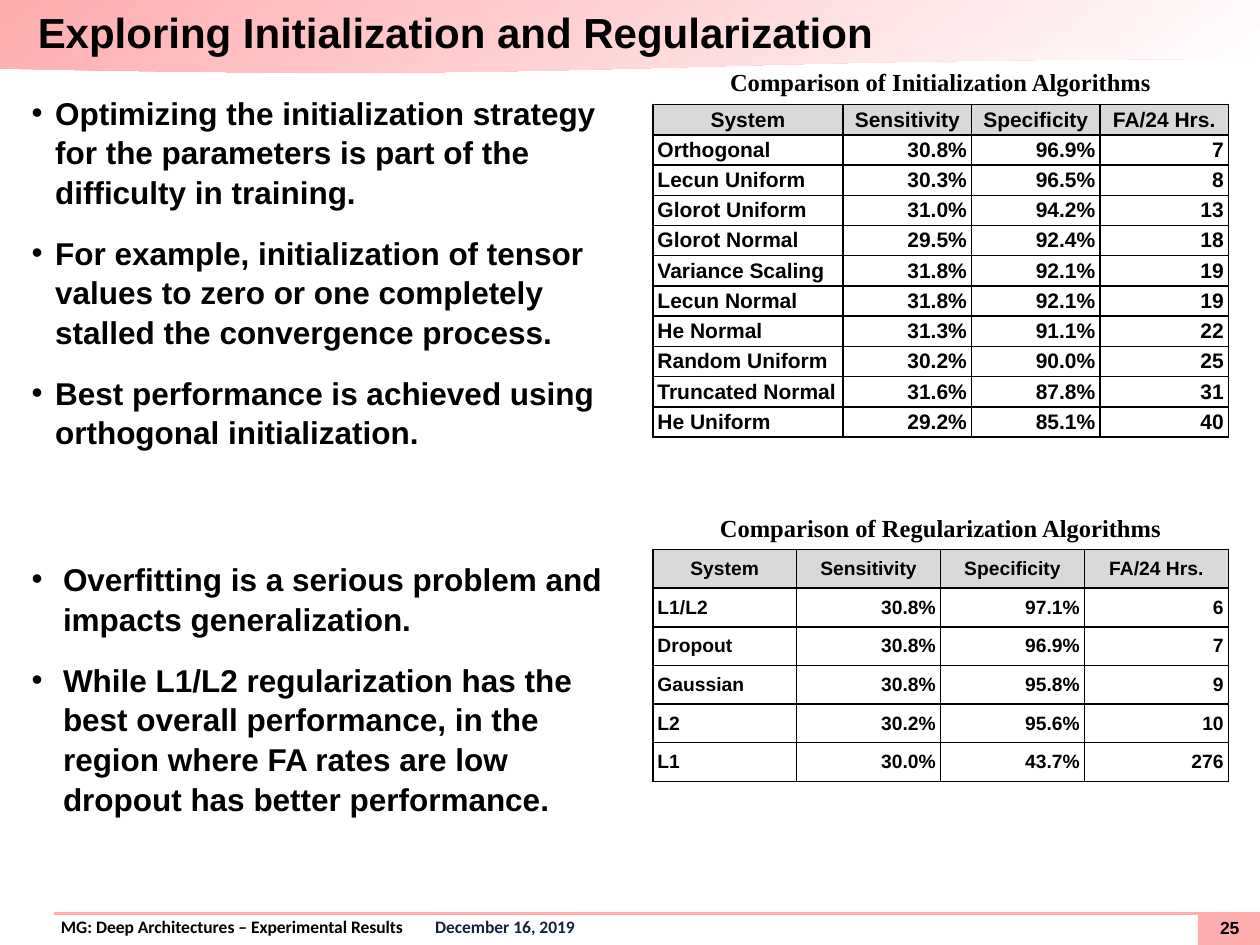
from dataclasses import dataclass

from lxml.etree import SubElement
from pptx import Presentation
from pptx.dml.color import RGBColor
from pptx.enum.shapes import MSO_CONNECTOR, MSO_SHAPE
from pptx.enum.text import MSO_ANCHOR, PP_ALIGN
from pptx.oxml.ns import qn
from pptx.slide import Slide
from pptx.util import Pt

BLACK, PINK, WHITE, NAVY, GREY = "000000", "FFACAF", "FFFFFF", "0F243E", "D9D9D9"
HEADINGS = ("System", "Sensitivity", "Specificity", "FA/24 Hrs.")
INITIALIZATION = (
    ("Orthogonal", "30.8%", "96.9%", "7"),
    ("Lecun Uniform", "30.3%", "96.5%", "8"),
    ("Glorot Uniform", "31.0%", "94.2%", "13"),
    ("Glorot Normal", "29.5%", "92.4%", "18"),
    ("Variance Scaling", "31.8%", "92.1%", "19"),
    ("Lecun Normal", "31.8%", "92.1%", "19"),
    ("He Normal", "31.3%", "91.1%", "22"),
    ("Random Uniform", "30.2%", "90.0%", "25"),
    ("Truncated Normal", "31.6%", "87.8%", "31"),
    ("He Uniform", "29.2%", "85.1%", "40"),
)
REGULARIZATION = (
    ("L1/L2", "30.8%", "97.1%", "6"),
    ("Dropout", "30.8%", "96.9%", "7"),
    ("Gaussian", "30.8%", "95.8%", "9"),
    ("L2", "30.2%", "95.6%", "10"),
    ("L1", "30.0%", "43.7%", "276"),
)
INITIALIZATION_POINTS = (
    "Optimizing the initialization strategy for the parameters is part of the difficulty in training.",
    "For example, initialization of tensor values to zero or one completely stalled the convergence process.",
    "Best performance is achieved using orthogonal initialization.",
)
REGULARIZATION_POINTS = (
    "Overfitting is a serious problem and impacts generalization.",
    "While L1/L2 regularization has the best overall performance, in the region where FA rates are low "
    "dropout has better performance.",
)


def color(value):
    return RGBColor.from_string(value)


@dataclass
class Deck:
    """Draws styled elements on the current slide, with lengths in points."""

    slide: Slide
    family: str = "Arial"

    def style(self, font, size, family=None, ink=BLACK):
        font.name = family or self.family
        font.size = Pt(size)
        font.bold = True
        font.color.rgb = color(ink)

    def block(self, preset, left, top, width, height):
        block = self.slide.shapes.add_shape(preset, Pt(left), Pt(top), Pt(width), Pt(height))
        block.shadow.inherit = False
        block.line.fill.background()
        block.fill.solid()
        block.fill.fore_color.rgb = color(PINK)
        return block

    def banner(self, left, top, width, height):
        fill = self.block(MSO_SHAPE.FLOWCHART_DOCUMENT, left, top, width, height).fill
        fill.gradient()
        fill.gradient_angle = 360 - 55
        for stop, shade in zip(fill.gradient_stops, (PINK, WHITE)):
            stop.color.rgb = color(shade)

    def rule(self, left, top, right):
        rule = self.slide.shapes.add_connector(MSO_CONNECTOR.STRAIGHT, Pt(left), Pt(top), Pt(right), Pt(top))
        rule.line.color.rgb = color(PINK)
        rule.line.width = Pt(1.5)
        SubElement(rule._element.spPr, qn("a:effectLst"))

    def frame(self, left, top, width, height, insets=(0, 0), anchor=MSO_ANCHOR.TOP):
        frame = self.slide.shapes.add_textbox(Pt(left), Pt(top), Pt(width), Pt(height)).text_frame
        frame.word_wrap = True
        frame.vertical_anchor = anchor
        frame.margin_left = frame.margin_right = Pt(insets[0])
        frame.margin_top = frame.margin_bottom = Pt(insets[1])
        return frame

    def label(self, text, box, size, family=None, align=PP_ALIGN.LEFT, **layout):
        frame = self.frame(*box, **layout)
        frame.text = text
        paragraph = frame.paragraphs[0]
        paragraph.alignment = align
        self.style(paragraph.runs[0].font, size, family)
        return paragraph

    def footer(self, topic, date, box):
        footer = self.label(topic, box, 10, "Calibri", insets=(7.2, 3.6))
        footer.line_spacing = 0.95
        properties = footer._p.get_or_add_pPr()
        properties.set("marL", str(Pt(22.5)))
        properties.set("indent", "0")
        tabs = SubElement(properties, qn("a:tabLst"))
        SubElement(tabs, qn("a:tab"), pos=str(Pt(670.5)), algn="r")
        date_run = footer.add_run()
        date_run.text = "\t" + date
        self.style(date_run.font, 10, "Calibri", NAVY)

    def bullets(self, points, box, indent):
        frame = self.frame(*box)
        frame.text = "\n".join(points)
        for paragraph in frame.paragraphs:
            paragraph.level = 1
            paragraph.line_spacing = 1.05
            paragraph.space_after = Pt(12)
            properties = paragraph._p.get_or_add_pPr()
            properties.set("marL", str(Pt(indent)))
            properties.set("indent", str(-Pt(indent)))
            SubElement(properties, qn("a:buFont"), typeface=self.family)
            SubElement(properties, qn("a:buChar"), char="•")
            self.style(paragraph.runs[0].font, 18)

    def cell(self, cell, text, size, align, heading):
        cell.text = text
        cell.vertical_anchor = MSO_ANCHOR.MIDDLE
        cell.margin_left = cell.margin_right = Pt(2.7)
        cell.margin_top = cell.margin_bottom = Pt(1.4)
        paragraph = cell.text_frame.paragraphs[0]
        paragraph.alignment = align
        self.style(paragraph.runs[0].font, size)
        properties = cell._tc.get_or_add_tcPr()
        for side in ("lnL", "lnR", "lnT", "lnB"):
            border = SubElement(properties, qn("a:" + side), w=str(Pt(1)))
            SubElement(SubElement(border, qn("a:solidFill")), qn("a:srgbClr"), val=BLACK)
        if heading:
            cell.fill.solid()
            cell.fill.fore_color.rgb = color(GREY)
        else:
            cell.fill.background()

    def results(self, systems, left, top, widths, row_height, size):
        rows = (HEADINGS, *systems)
        table = self.slide.shapes.add_table(
            len(rows), len(widths), Pt(left), Pt(top), Pt(sum(widths)), Pt(row_height * len(rows))
        ).table
        table.horz_banding = table.first_row = False
        for column, width in zip(table.columns, widths):
            column.width = Pt(width)
        for r, values in enumerate(rows):
            table.rows[r].height = Pt(row_height)
            for c, value in enumerate(values):
                align = PP_ALIGN.CENTER if r == 0 else PP_ALIGN.RIGHT if c else PP_ALIGN.LEFT
                self.cell(table.cell(r, c), value, size, align, r == 0)


def main():
    presentation = Presentation()
    presentation.slide_width, presentation.slide_height = Pt(720), Pt(540)
    deck = Deck(presentation.slides.add_slide(presentation.slide_layouts[6]))

    deck.banner(0, 0, 720.5, 42)
    deck.block(MSO_SHAPE.RECTANGLE, 684.5, 521.5, 36, 18.5)
    deck.footer(" MG: Deep Architectures – Experimental Results", "December 16, 2019", (3, 520.6, 718, 18.7))
    deck.rule(31, 522, 720)
    deck.label("25", (688.3, 524, 28.8, 12.2), 10, align=PP_ALIGN.CENTER, anchor=MSO_ANCHOR.MIDDLE)
    deck.label("Exploring Initialization and Regularization", (0, 0, 720, 38 - 2), 24,
               insets=(21.6, 0), anchor=MSO_ANCHOR.MIDDLE)

    deck.bullets(INITIALIZATION_POINTS, (18, 52.5, 342, 197), 13.5)
    deck.bullets(REGULARIZATION_POINTS, (18, 319, 342, 123), 18)

    deck.results(INITIALIZATION, 373, 59.8, (108.8, 73.4, 73.4, 73.4), 17.28, 12)
    deck.results(REGULARIZATION, 373, 314, (82.25,) * 4, 22.1, 11)
    for method, top in (("Initialization", 34.6), ("Regularization", 289.6)):
        deck.label(f"Comparison of {method} Algorithms", (373, top, 329, 24.2), 14, "Times New Roman",
                   PP_ALIGN.CENTER, insets=(7.2, 3.6))

    presentation.save("out.pptx")


if __name__ == "__main__":
    main()
